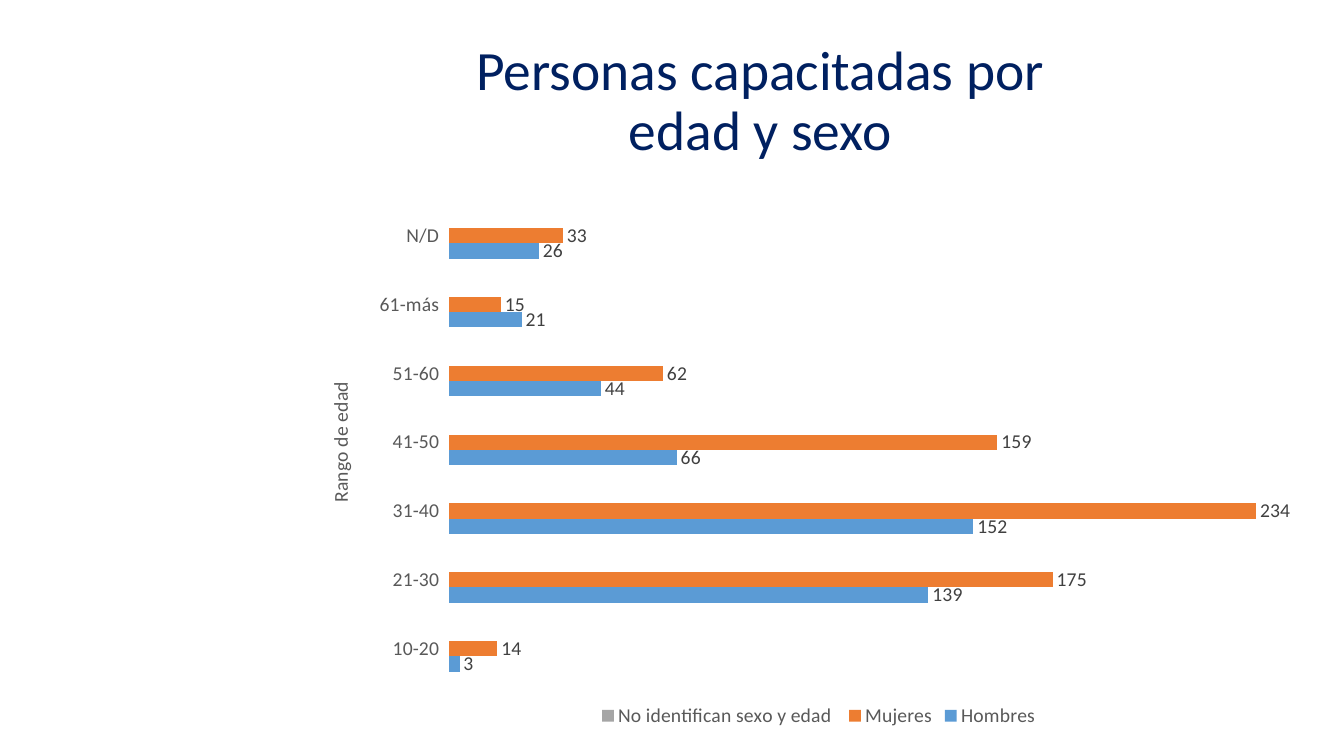
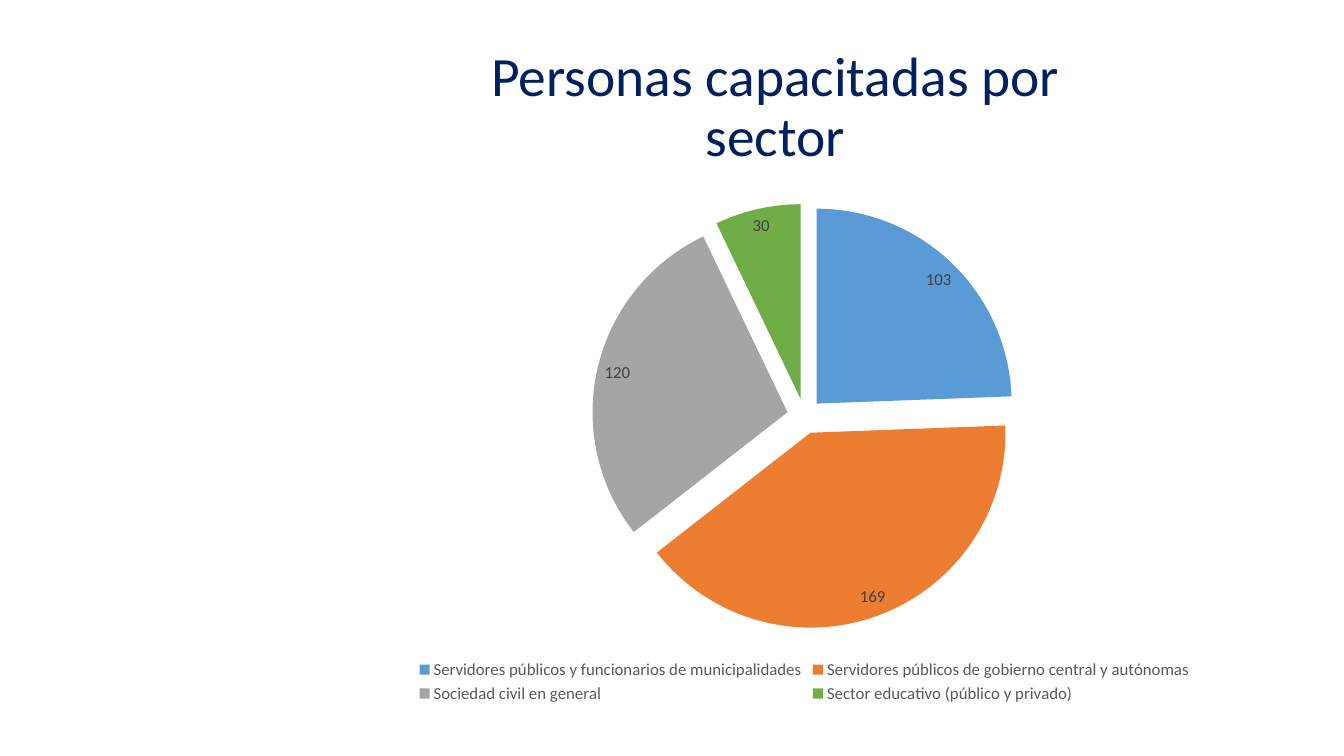
from dataclasses import dataclass

import pptx
import pptx.chart.data
import pptx.dml.color
import pptx.enum.chart
import pptx.enum.text
import pptx.oxml
import pptx.oxml.ns
import pptx.util

EMU_PER_PX = 9144  # 100 px to the inch


@dataclass(frozen=True)
class Theme:
    font: str = "Calibri"
    title: str = "002060"
    axis_text: str = "595959"
    label_text: str = "404040"
    accents: tuple = ("5B9BD5", "ED7D31", "A5A5A5", "70AD47")
    title_size: float = 39.6
    bar_size: int = 14
    pie_size: int = 12


THEME = Theme()

AGE_RANGES = ("10-20", "21-30", "31-40", "41-50", "51-60", "61-más", "N/D")
PEOPLE_BY_SEX = {
    "Hombres": (3, 139, 152, 66, 44, 21, 26),
    "Mujeres": (14, 175, 234, 159, 62, 15, 33),
    "No identifican sexo y edad ": (None,) * len(AGE_RANGES),
}
PEOPLE_BY_SECTOR = {
    "Servidores públicos y funcionarios de municipalidades": 103,
    "Servidores públicos de gobierno central y autónomas": 169,
    "Sociedad civil en general": 120,
    "Sector educativo (público y privado)": 30,
}


def px(length):
    return pptx.util.Emu(length * EMU_PER_PX)


def style_font(font, size, color):
    font.name = THEME.font
    font.size = pptx.util.Pt(size)
    font.bold = False
    font.color.rgb = pptx.dml.color.RGBColor.from_string(color)


def fill_solid(chart_format, color):
    chart_format.fill.solid()
    chart_format.fill.fore_color.rgb = pptx.dml.color.RGBColor.from_string(color)


def add_titled_slide(presentation, title, box):
    slide = presentation.slides.add_slide(presentation.slide_layouts[5])
    shape = slide.shapes.title
    shape.left, shape.top, shape.width, shape.height = map(px, box)
    frame = shape.text_frame
    frame.word_wrap = True
    frame.auto_size = pptx.enum.text.MSO_AUTO_SIZE.NONE
    frame.vertical_anchor = pptx.enum.text.MSO_ANCHOR.MIDDLE
    paragraph = frame.paragraphs[0]
    paragraph.alignment = pptx.enum.text.PP_ALIGN.CENTER
    paragraph.line_spacing = 0.9
    run = paragraph.add_run()
    run.text = title
    style_font(run.font, THEME.title_size, THEME.title)
    return slide


def set_plot_layout(chart, left, top, width, height):
    """Fix the inner plot area, in fractions of the chart box."""
    plot_area = chart._chartSpace.chart.plotArea
    for old_layout in plot_area.findall(pptx.oxml.ns.qn("c:layout")):
        plot_area.remove(old_layout)
    sizes = "".join(f'<c:{tag} val="{value}"/>' for tag, value in
                    zip("xywh", (left, top, width, height)))
    plot_area.insert(0, pptx.oxml.parse_xml(
        f'<c:layout {pptx.oxml.ns.nsdecls("c")}><c:manualLayout>'
        '<c:layoutTarget val="inner"/><c:xMode val="edge"/><c:yMode val="edge"/>'
        f'{sizes}</c:manualLayout></c:layout>'))


def add_chart(slide, kind, data, box, size):
    """Add a chart without title, with its legend at the bottom."""
    chart = slide.shapes.add_chart(kind, *map(px, box), data).chart
    chart.has_title = False
    style_font(chart.font, size, THEME.axis_text)
    chart.has_legend = True
    chart.legend.position = pptx.enum.chart.XL_LEGEND_POSITION.BOTTOM
    chart.legend.include_in_layout = False
    style_font(chart.legend.font, size, THEME.axis_text)
    return chart


def show_values(series, size, position):
    labels = series.data_labels
    labels.show_value = True
    labels.position = position
    style_font(labels.font, size, THEME.label_text)


def add_age_chart(slide, box):
    data = pptx.chart.data.CategoryChartData()
    data.categories = AGE_RANGES
    for name, values in PEOPLE_BY_SEX.items():
        data.add_series(name, values)
    chart = add_chart(slide, pptx.enum.chart.XL_CHART_TYPE.BAR_CLUSTERED,
                      data, box, THEME.bar_size)
    set_plot_layout(chart, 0.14, 0.02, 0.84, 0.89)

    plot = chart.plots[0]
    plot.gap_width = 150
    plot.overlap = 0
    plot.vary_by_categories = False
    for series, color in zip(plot.series, THEME.accents):
        fill_solid(series.format, color)
        if any(series.values):
            show_values(series, THEME.bar_size,
                        pptx.enum.chart.XL_LABEL_POSITION.OUTSIDE_END)

    ages = chart.category_axis
    ages.has_major_gridlines = False
    ages.format.line.fill.background()
    style_font(ages.tick_labels.font, THEME.bar_size, THEME.axis_text)
    title_frame = ages.axis_title.text_frame
    title_frame._txBody.find(pptx.oxml.ns.qn("a:bodyPr")).set("rot", "-5400000")
    run = title_frame.paragraphs[0].add_run()
    run.text = "Rango de edad"
    style_font(run.font, THEME.bar_size, THEME.axis_text)

    people = chart.value_axis
    people.has_major_gridlines = False
    people.minimum_scale, people.maximum_scale = 0, 250
    people.visible = False


def add_sector_chart(slide, box):
    data = pptx.chart.data.CategoryChartData()
    data.categories = PEOPLE_BY_SECTOR.keys()
    data.add_series("Series 1", PEOPLE_BY_SECTOR.values())
    chart = add_chart(slide, pptx.enum.chart.XL_CHART_TYPE.PIE,
                      data, box, THEME.pie_size)
    set_plot_layout(chart, 0.28, 0.03, 0.44, 0.82)

    plot = chart.plots[0]
    plot.vary_by_categories = True
    series = plot.series[0]
    fill_solid(series.format, THEME.accents[0])
    for index, color in enumerate(THEME.accents):
        fill_solid(series.points[index].format, color)
    show_values(series, THEME.pie_size, pptx.enum.chart.XL_LABEL_POSITION.BEST_FIT)
    series._element.find(pptx.oxml.ns.qn("c:spPr")).addnext(pptx.oxml.parse_xml(
        f'<c:explosion {pptx.oxml.ns.nsdecls("c")} val="9"/>'))


def main():
    presentation = pptx.Presentation()
    presentation.slide_width, presentation.slide_height = px(1333), px(750)

    age_slide = add_titled_slide(
        presentation, "Personas capacitadas por edad y sexo", (417, 40, 674, 123))
    add_age_chart(age_slide, (303, 189, 1018, 537))

    sector_slide = add_titled_slide(
        presentation, "Personas capacitadas por sector", (432, 46, 674, 123))
    add_sector_chart(sector_slide, (319, 186, 958, 516))

    presentation.save("out.pptx")


if __name__ == "__main__":
    main()
